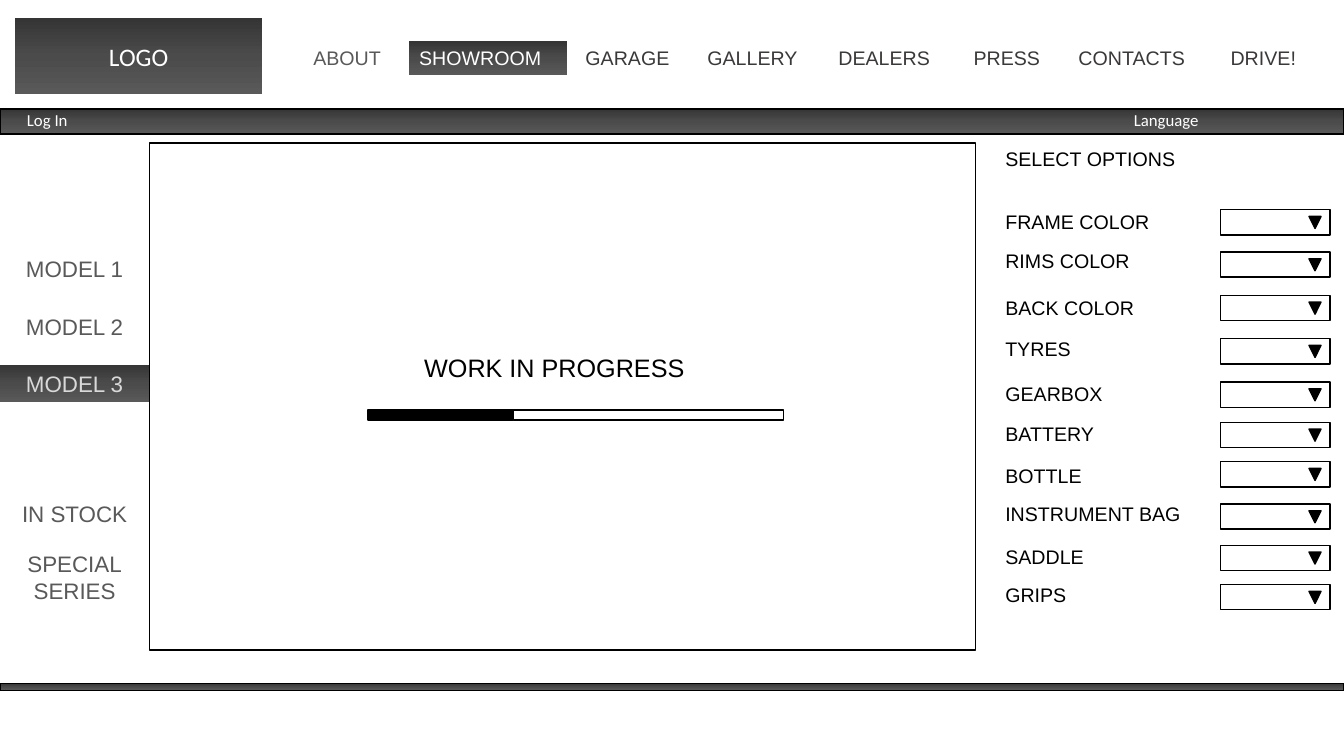
import copy
import pptx
import pptx.chart.data
import pptx.dml.color
import pptx.enum.shapes
import pptx.enum.text
import pptx.oxml.ns
import pptx.util

Pt = pptx.util.Pt
RECT = pptx.enum.shapes.MSO_SHAPE.RECTANGLE
TRIANGLE = pptx.enum.shapes.MSO_SHAPE.ISOSCELES_TRIANGLE
ALIGN = pptx.enum.text.PP_ALIGN
COLORS = {"black": "000000", "white": "FFFFFF", "gray": "595959",
          "dark": "3B3838", "pale": "D9D9D9"}
GRADIENT = [(0, "353535"), (0.5, "4B4B4B"), (1, "595959")]

NAV = [("ABOUT", 216.7, 70, "gray"), ("SHOWROOM", 292.3, 113, "white"),
       ("GARAGE", 411.1, 81, "dark"), ("GALLERY", 498.2, 88, "dark"),
       ("DEALERS", 591.8, 91, "dark"), ("PRESS", 688.3, 70, "dark"),
       ("CONTACTS", 763.2, 101, "dark"), ("DRIVE!", 871.9, 69, "dark")]
BAR_LINKS = [("Log In", 12.2, 44), ("Language", 802.8, 61)]
SIDEBAR = [("MODEL 1", 178.6, 26.6), ("MODEL 2", 220.3, 26.6),
           ("MODEL 3", 260.6, 26.6), ("IN STOCK", 353.5, 26.6),
           ("SPECIAL\nSERIES", 389.5, 46.1)]
OPTIONS = [("FRAME COLOR", 146.2, 132, 149.8), ("RIMS COLOR", 174.2, 118, 180),
           ("BACK COLOR", 208.1, 122, 211), ("TYRES", 236.9, 66, 241.9),
           ("GEARBOX", 269.3, 93, 272.9), ("BATTERY", 298.1, 85, 301.7),
           ("BOTTLE", 327.6, 76, 329.8), ("INSTRUMENT BAG", 355, 161, 360),
           ("SADDLE", 385.9, 81, 389.5), ("GRIPS", 412.6, 66, 417.6)]
ACTIVE = ("SHOWROOM", "MODEL 3")
SLIDE_W, SLIDE_H = 960, 540
NAV_Y, LABEL_H, LABEL_X = 29.3, 24.5, 711
SELECT_X, SELECT_W, SELECT_H = 872, 78, 18
ARROW_X, ARROW_DY, ARROW = 935, 4.8, 8.6

prs = pptx.Presentation()
prs.slide_width, prs.slide_height = Pt(SLIDE_W), Pt(SLIDE_H)
s = prs.slides.add_slide(prs.slide_layouts[6])


def rgb(value):
    return pptx.dml.color.RGBColor.from_string(value)


def add_box(x, y, w, h, fill=None, line=True, kind=RECT):
    sp = s.shapes.add_shape(kind, Pt(x), Pt(y), Pt(w), Pt(h))
    sp.shadow.inherit = False
    if fill == "gradient":
        sp.fill.gradient()
        sp.fill.gradient_angle = 270
        stops = sp._element.spPr.find(".//" + pptx.oxml.ns.qn("a:gsLst"))
        stops.insert(1, copy.deepcopy(stops[0]))
        for stop, (position, color) in zip(sp.fill.gradient_stops, GRADIENT):
            stop.position = position
            stop.color.rgb = rgb(color)
    elif fill:
        sp.fill.solid()
        sp.fill.fore_color.rgb = rgb(COLORS[fill])
    else:
        sp.fill.background()
    if line:
        sp.line.color.rgb = rgb(COLORS["black"])
        sp.line.width = Pt(1)
    else:
        sp.line.fill.background()
    return sp


def add_text(text, x, y, w, h, size=14, color="black", font="Arial",
             align=ALIGN.LEFT, wrap=False, filled=False, middle=False):
    if filled:
        sp = add_box(x, y, w, h, "gradient", line=False)
    else:
        sp = s.shapes.add_textbox(Pt(x), Pt(y), Pt(w), Pt(h))
    tf = sp.text_frame
    tf.word_wrap = wrap
    anchor = pptx.enum.text.MSO_ANCHOR
    tf.vertical_anchor = anchor.MIDDLE if middle else anchor.TOP
    fit = pptx.enum.text.MSO_AUTO_SIZE
    tf.auto_size = fit.NONE if middle else fit.SHAPE_TO_FIT_TEXT
    for i, part in enumerate(text.split("\n")):
        p = tf.add_paragraph() if i else tf.paragraphs[0]
        p.alignment = align
        r = p.add_run()
        r.text = part
        r.font.size = Pt(size)
        r.font.name = font
        r.font.color.rgb = rgb(COLORS[color])


add_box(106.6, 102.2, 590.4, 362.2)
add_box(0, 488.2, SLIDE_W, 5, "gradient")
add_box(0, 77.8, SLIDE_W, 18, "gradient")
add_text("LOGO", 10.8, 13, 176.4, 54, size=18, color="white", font="Calibri",
         align=ALIGN.CENTER, wrap=True, filled=True, middle=True)

for text, x, w, color in NAV:
    add_text(text, x, NAV_Y, w, LABEL_H, color=color, filled=text in ACTIVE)
for text, x, w in BAR_LINKS:
    add_text(text, x, 75.2, w, 21.6, size=12, color="white", font="Calibri")
for text, y, h in SIDEBAR:
    active = text in ACTIVE
    add_text(text, 0, y, 106.6, h, size=16, color="pale" if active else "gray",
             align=ALIGN.CENTER, wrap=True, filled=active)

add_text("WORK IN PROGRESS", 295.9, 248.4, 229.7, 28.8, size=18)
add_box(262.8, 293, 104, 7.2, "black")
add_box(366.8, 293, 192.8, 7.2, "white")

add_text("SELECT OPTIONS", LABEL_X, 101.5, 156, LABEL_H)
for text, y, w, select_y in OPTIONS:
    add_text(text, LABEL_X, y, w, LABEL_H)
    add_box(SELECT_X, select_y, SELECT_W, SELECT_H, "white")
    arrow = add_box(ARROW_X, select_y + ARROW_DY, ARROW, ARROW, "black", kind=TRIANGLE)
    arrow.rotation = 180

prs.save("out.pptx")
